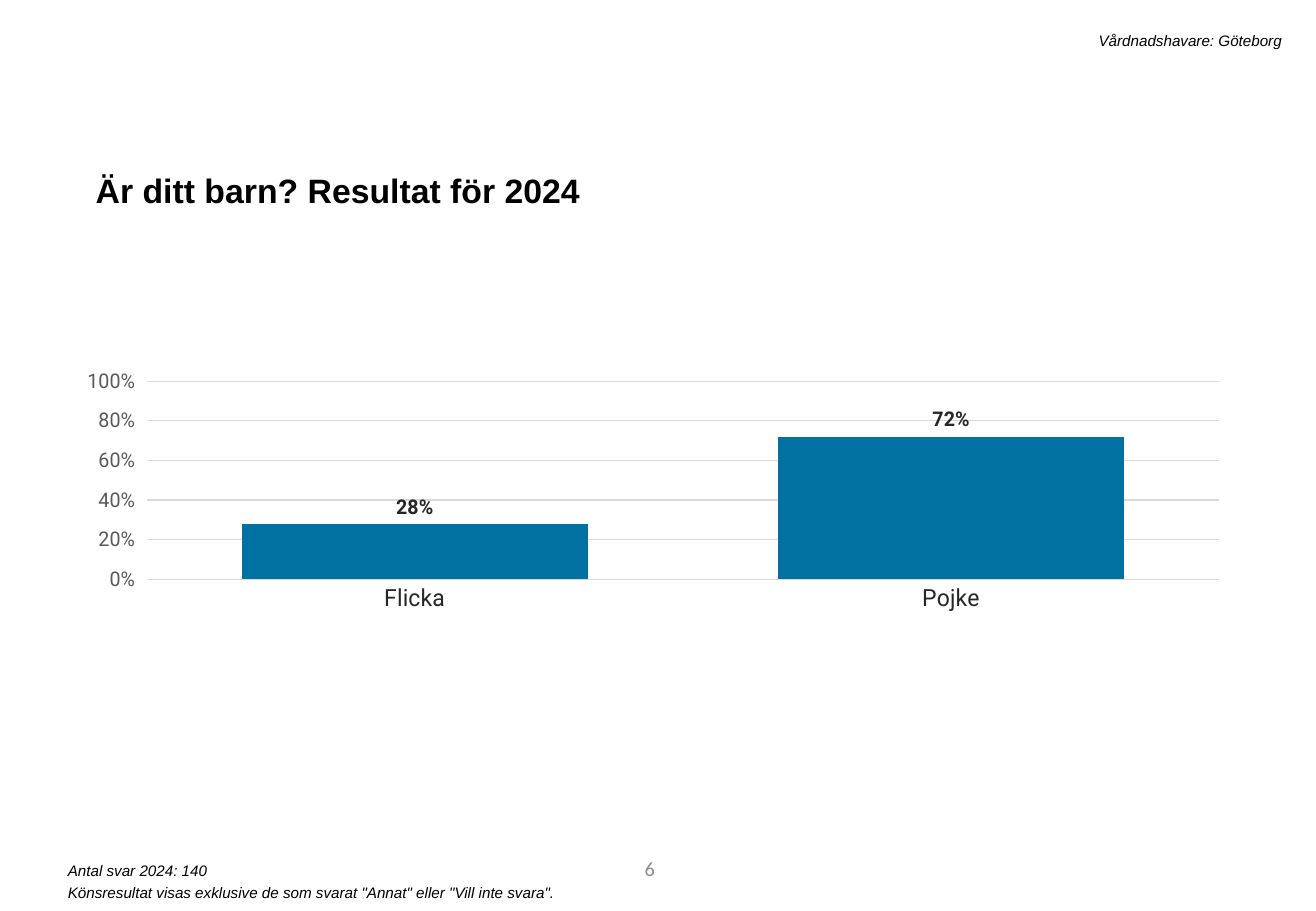
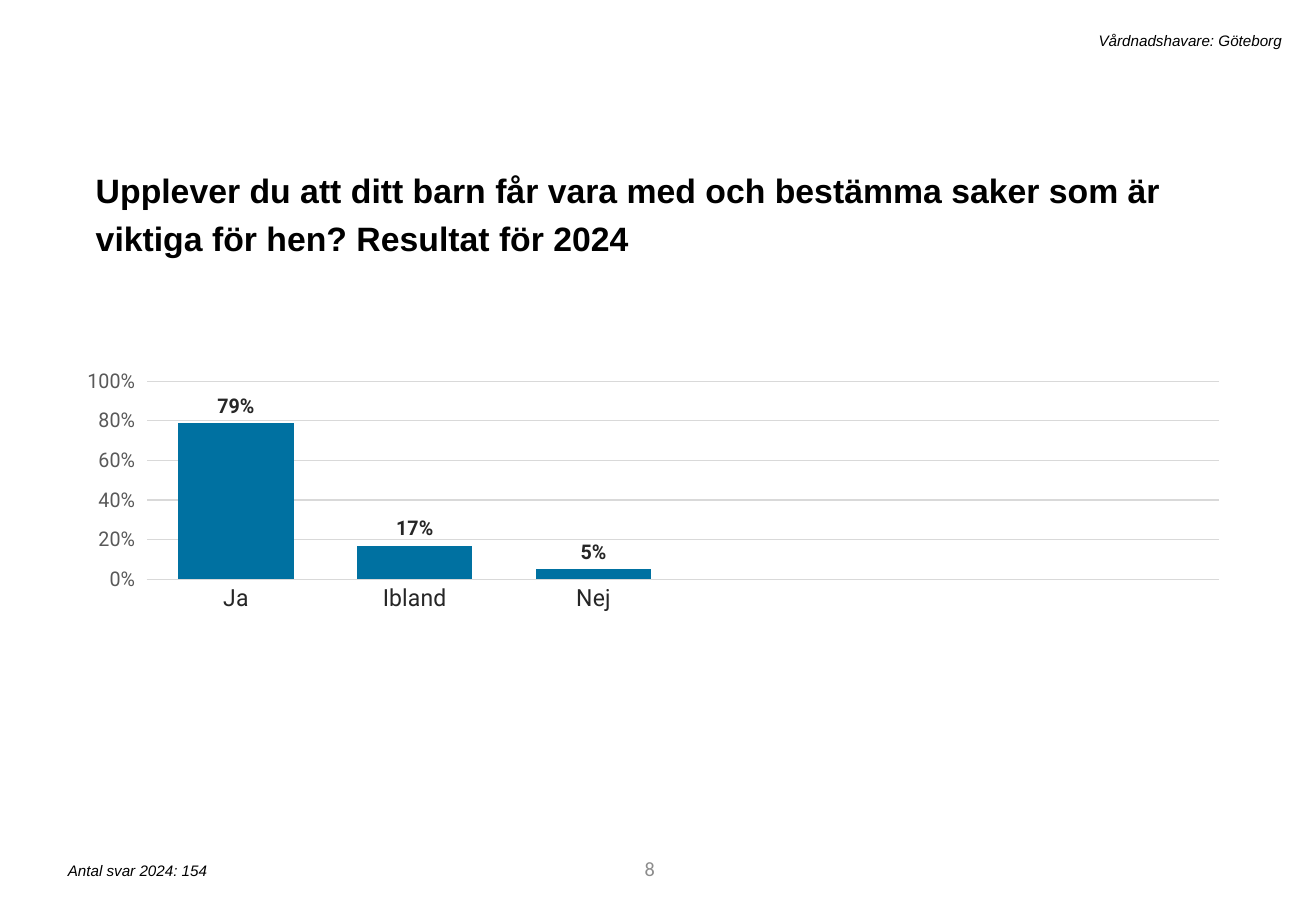
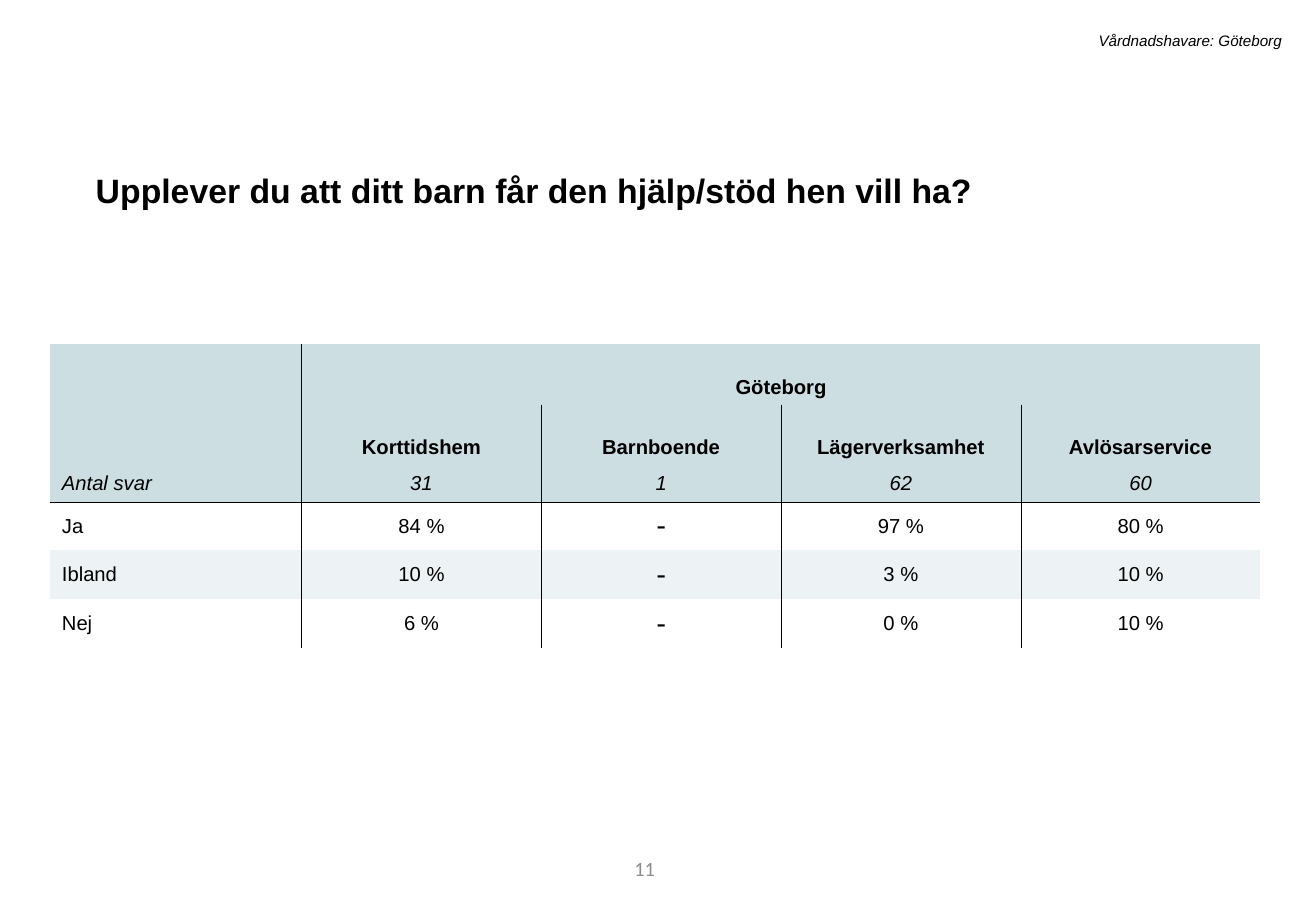
from lxml import etree
from pptx import Presentation
from pptx import util as u
from pptx.chart import data as chart_data
from pptx.dml import color as dml_color
from pptx.enum import chart as chart_enum
from pptx.enum import text
from pptx.oxml import ns, parse_xml

LEFT, CENTER, RIGHT = text.PP_ALIGN.LEFT, text.PP_ALIGN.CENTER, text.PP_ALIGN.RIGHT
MIDDLE, BOTTOM = text.MSO_ANCHOR.MIDDLE, text.MSO_ANCHOR.BOTTOM
BLACK, GRAY, AXIS_GRAY, LABEL, GRID = "000000", "8C8C8C", "595959", "262626", "D9D9D9"
BAR, HEADER, BAND = "0071A1", "CCDEE1", "EDF3F4"


def rgb(value):
    return dml_color.RGBColor.from_string(value)


def style_font(font, size, name="Arial", color=BLACK, bold=False, italic=False):
    font.size = u.Pt(size)
    font.name = name
    font.color.rgb = rgb(color)
    font.bold = bold
    font.italic = italic


class Report:
    def __init__(self):
        self.presentation = Presentation()
        self.presentation.slide_width = u.Pt(780)
        self.presentation.slide_height = u.Pt(540)
        self.slide = None

    def add_slide(self, number, title, notes=()):
        self.slide = self.presentation.slides.add_slide(self.presentation.slide_layouts[6])
        page = self.add_text(str(number), (219.6, 500.4, 175.7, 28.8), 12, RIGHT,
                             name="Calibri", color=GRAY)
        page.text_frame.auto_size = text.MSO_AUTO_SIZE.NONE
        page.text_frame.vertical_anchor = MIDDLE
        heading = self.add_text(title, (49.7, 92.2, 676.8, 33.8), 20, bold=True)
        paragraph = heading.text_frame.paragraphs[0]
        paragraph.line_spacing = 1.2
        paragraph.space_before = u.Pt(10)
        self.add_text("Vårdnadshavare: Göteborg", (128.9, 15.1, 637.9, 18), 9, RIGHT, italic=True)
        for index, note in enumerate(notes):
            self.add_text(note, (33.1, 506.9 + 13 * index, 317.5, 18), 9, italic=True)

    def add_text(self, content, box, size, align=LEFT, **font):
        shape = self.slide.shapes.add_textbox(*map(u.Pt, box))
        frame = shape.text_frame
        frame.word_wrap = True
        frame.auto_size = text.MSO_AUTO_SIZE.SHAPE_TO_FIT_TEXT
        frame.text = content
        paragraph = frame.paragraphs[0]
        paragraph.alignment = align
        style_font(paragraph.runs[0].font, size, **font)
        return shape

    def add_column_chart(self, categories, values):
        data = chart_data.CategoryChartData(number_format="0%")
        data.categories = categories
        data.add_series("Series 1", values)
        chart = self.slide.shapes.add_chart(
            chart_enum.XL_CHART_TYPE.COLUMN_CLUSTERED,
            u.Pt(51.8), u.Pt(182.2), u.Pt(676.8), u.Pt(284.4), data).chart
        chart.has_title = False
        chart.has_legend = False
        style_font(chart.font, 10, "Roboto")

        category_axis = chart.category_axis
        category_axis.major_tick_mark = chart_enum.XL_TICK_MARK.NONE
        self.style_line(category_axis.format.line)
        style_font(category_axis.tick_labels.font, 14, "Roboto", LABEL)

        value_axis = chart.value_axis
        value_axis.minimum_scale, value_axis.maximum_scale = 0, 1
        value_axis.major_unit = 0.2
        value_axis.format.line.fill.background()
        self.style_line(value_axis.major_gridlines.format.line)
        self.style_number_labels(value_axis.tick_labels, AXIS_GRAY)

        plot = chart.plots[0]
        plot.gap_width = 55
        plot.vary_by_categories = False
        series = plot.series[0]
        series.format.fill.solid()
        series.format.fill.fore_color.rgb = rgb(BAR)
        labels = series.data_labels
        labels.show_value = True
        labels.position = chart_enum.XL_LABEL_POSITION.OUTSIDE_END
        self.style_number_labels(labels, LABEL, bold=True)
        self.set_plot_area(chart, x=0.025, y=0.154, w=0.966, h=0.413)

    def style_line(self, line):
        line.color.rgb = rgb(GRID)
        line.width = u.Pt(0.75)

    def style_number_labels(self, labels, color, bold=False):
        labels.number_format = "0%"
        labels.number_format_is_linked = False
        style_font(labels.font, 12, "Roboto", color, bold)

    def set_plot_area(self, chart, **fractions):
        plot_area = chart.element.find(".//" + ns.qn("c:plotArea"))
        for layout in plot_area.findall(ns.qn("c:layout")):
            plot_area.remove(layout)
        settings = [("layoutTarget", "inner"), ("xMode", "edge"), ("yMode", "edge")]
        items = "".join(f'<c:{tag} val="{value}"/>' for tag, value in [*settings, *fractions.items()])
        plot_area.insert(0, parse_xml(
            f'<c:layout {ns.nsdecls("c")}><c:manualLayout>{items}</c:manualLayout></c:layout>'))

    def add_result_table(self, region, header, counts, results):
        rows = [["", region] + [""] * (len(header) - 1), ["", *header], counts, *results]
        heights = [36, 36, 21.6] + [28.8] * len(results)
        widths = [149.3] + [142.1] * len(header)
        table = self.slide.shapes.add_table(
            len(rows), len(widths), u.Pt(29.5), u.Pt(203.8),
            u.Pt(sum(widths)), u.Pt(sum(heights))).table
        table.first_row = table.horz_banding = False
        for column, width in zip(table.columns, widths):
            column.width = u.Pt(width)
        for row, height in zip(table.rows, heights):
            row.height = u.Pt(height)
        table.cell(0, 1).merge(table.cell(0, len(header)))
        for row_index, row in enumerate(rows):
            fill = HEADER if row_index < 3 else BAND if row_index % 2 == 0 else None
            for column_index, content in enumerate(row):
                cell = table.cell(row_index, column_index)
                inner_from = 2 if row_index else 1
                edges = {
                    "L": column_index == 1 or column_index >= 1 and row_index > 0,
                    "R": column_index < len(header) and (row_index > 0 or column_index < inner_from),
                    "T": row_index == 3,
                    "B": row_index == 2,
                }
                self.style_cell(cell, fill, edges)
                cell.vertical_anchor = BOTTOM if row_index < 2 else MIDDLE
                if content:
                    cell.text = content
                    paragraph = cell.text_frame.paragraphs[0]
                    paragraph.alignment = CENTER if column_index else LEFT
                    size, name = (18, "Calibri") if content == "-" else (12, "Arial")
                    style_font(paragraph.runs[0].font, size, name,
                               bold=row_index < 2, italic=row_index == 2)

    def style_cell(self, cell, fill, edges):
        properties = cell._tc.get_or_add_tcPr()
        for side, visible in edges.items():
            line = etree.SubElement(properties, ns.qn(f"a:ln{side}"), w=str(u.Pt(0.25)))
            if visible:
                solid = etree.SubElement(line, ns.qn("a:solidFill"))
                etree.SubElement(solid, ns.qn("a:srgbClr"), val=BLACK)
            else:
                etree.SubElement(line, ns.qn("a:noFill"))
        if fill:
            cell.fill.solid()
            cell.fill.fore_color.rgb = rgb(fill)
        else:
            cell.fill.background()


def main():
    report = Report()

    report.add_slide(6, "Är ditt barn? Resultat för 2024", [
        "Antal svar 2024: 140",
        'Könsresultat visas exklusive de som svarat "Annat" eller "Vill inte svara".'])
    report.add_column_chart(["Flicka", "Pojke"], [0.28, 0.72])

    report.add_slide(
        8, "Upplever du att ditt barn får vara med och bestämma saker som är viktiga för hen? "
        "Resultat för 2024", ["Antal svar 2024: 154"])
    report.add_column_chart(["Ja", "Ibland", "Nej", "", "", ""],
                            [0.79, 0.17, 0.05, None, None, None])

    report.add_slide(11, "Upplever du att ditt barn får den hjälp/stöd hen vill ha?")
    report.add_result_table(
        "Göteborg",
        ["Korttidshem", "Barnboende", "Lägerverksamhet", "Avlösarservice"],
        ["Antal svar", "31", "1", "62", "60"],
        [["Ja", "84 %", "-", "97 %", "80 %"],
         ["Ibland", "10 %", "-", "3 %", "10 %"],
         ["Nej", "6 %", "-", "0 %", "10 %"]])

    report.presentation.save("out.pptx")


if __name__ == "__main__":
    main()
